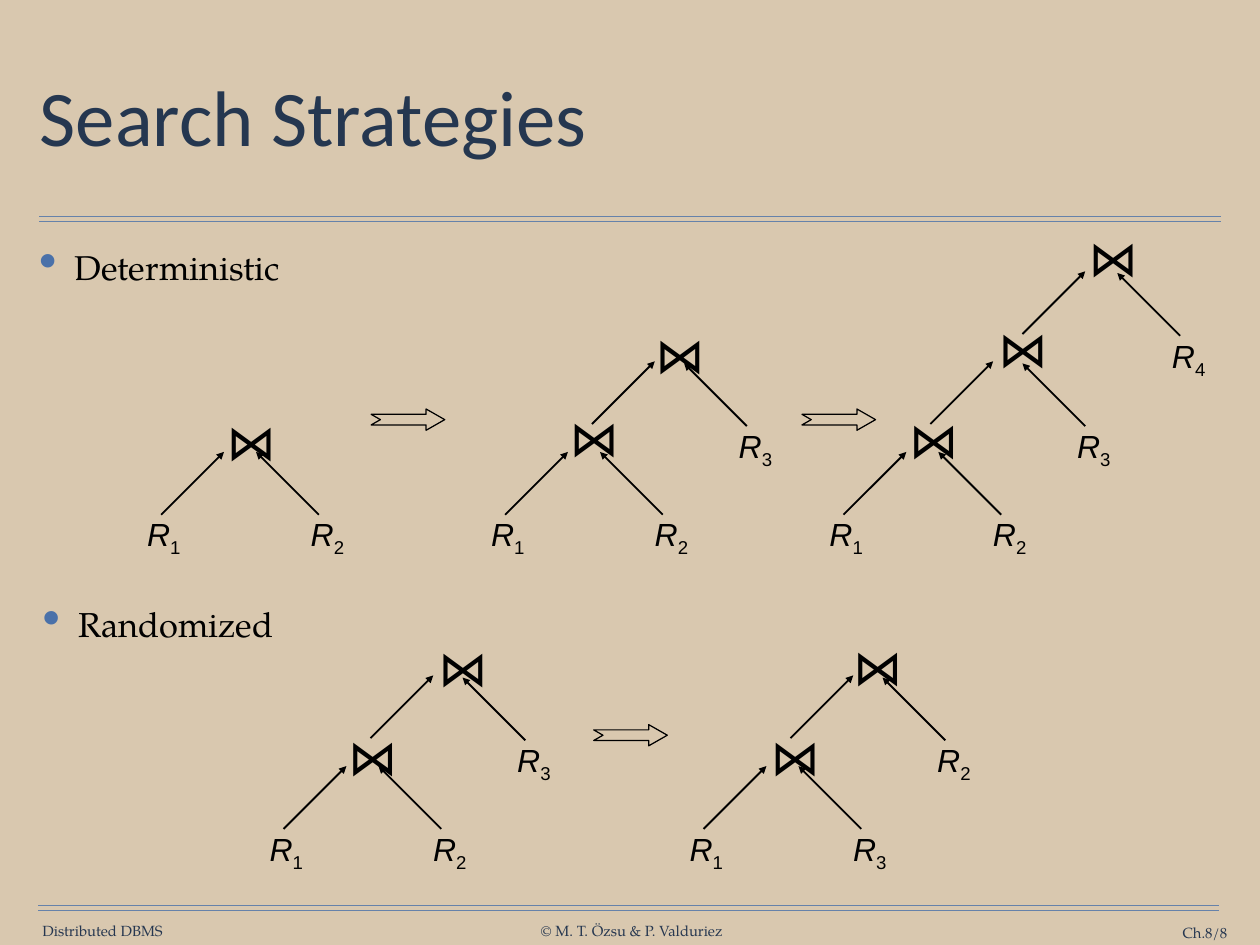
"""Build the slide on search strategies for join trees."""
import pptx
import pptx.dml.color
import pptx.enum.shapes
import pptx.enum.text
import pptx.oxml.ns
import pptx.util
from lxml import etree

Cm, Pt = pptx.util.Cm, pptx.util.Pt
RGB = pptx.dml.color.RGBColor.from_string
qn = pptx.oxml.ns.qn
ALIGN = pptx.enum.text.PP_ALIGN
ANCHOR = pptx.enum.text.MSO_ANCHOR
FIT = pptx.enum.text.MSO_AUTO_SIZE

colors = {"sand": "D9C8AF", "rule": "6682AA", "navy": "253750",
          "foot": "263750", "dot": "4A71A9", "ink": "000000"}
serif = "TeX Gyre Pagella"

deck = pptx.Presentation()
deck.slide_width, deck.slide_height = Cm(36.12), Cm(27.1)
slide = deck.slides.add_slide(deck.slide_layouts[6])
slide.background.fill.solid()
slide.background.fill.fore_color.rgb = RGB(colors["sand"])


def write(text, box, size, font=serif, color="ink", align=ALIGN.LEFT, pad=(0, 0),
          anchor=ANCHOR.TOP, wrap=True, grow=True, sub="", bullet=False, spacing=None):
    """Add a text box, with an optional bullet or an italic letter and subscript."""
    frame = slide.shapes.add_textbox(*[Cm(v) for v in box]).text_frame
    frame.word_wrap = wrap
    frame.auto_size = FIT.SHAPE_TO_FIT_TEXT if grow else FIT.NONE
    frame.vertical_anchor = anchor
    frame.margin_left = frame.margin_right = Cm(pad[0])
    frame.margin_top = frame.margin_bottom = Cm(pad[1])
    para = frame.paragraphs[0]
    para.alignment = align
    if spacing:
        para.line_spacing = spacing
    if bullet:
        props = para._p.get_or_add_pPr()
        props.set("marL", str(Cm(1.02)))
        props.set("indent", str(Cm(-1.02)))
        tint = etree.SubElement(props, qn("a:buClr"))
        etree.SubElement(tint, qn("a:srgbClr"), val=colors["dot"])
        etree.SubElement(props, qn("a:buSzPct"), val="150000")
        etree.SubElement(props, qn("a:buChar"), char="•")
    for part in filter(None, (text, sub)):
        run = para.add_run()
        run.text = part
        run.font.size = Pt(size)
        run.font.name = font
        run.font.color.rgb = RGB(colors[color])
        run.font.italic = bool(sub) and part == text
        props = run._r.get_or_add_rPr()
        etree.SubElement(props, qn("a:ea"), typeface=font)
        if part == sub:
            props.set("baseline", "-25000")


def draw(x1, y1, x2, y2, color="ink", width=1.5, head=True):
    """Add a straight line, with an arrowhead at its end if wanted."""
    line = slide.shapes.add_connector(pptx.enum.shapes.MSO_CONNECTOR.STRAIGHT,
                                      Cm(x1), Cm(y1), Cm(x2), Cm(y2))
    line.line.color.rgb = RGB(colors[color])
    line.line.width = Pt(width)
    if head:
        etree.SubElement(line.line._get_or_add_ln(), qn("a:tailEnd"), type="triangle")
    etree.SubElement(line._element.spPr, qn("a:effectLst"))


for left, top, right in [(1.12, 6.2, 35), (1.09, 25.96, 34.95)]:
    for y in (top, top + 0.15):
        draw(left, y, right, y, color="rule", width=1, head=False)

for text, box, align, wrap in [
        ("Distributed DBMS", (1.19, 26.44, 3.51, 0.51), ALIGN.CENTER, False),
        ("© M. T. Özsu & P. Valduriez", (15.47, 26.44, 5.28, 0.51), ALIGN.CENTER, False),
        ("Ch.8/8", (31.27, 26.49, 3.91, 0.51), ALIGN.RIGHT, True)]:
    write(text, box, 12, color="foot", align=align, anchor=ANCHOR.MIDDLE, wrap=wrap)

write("Search Strategies", (0.99, 1.24, 34.14, 4.47), 64, font="Calibri", color="navy",
      pad=(0.15, 0.15), anchor=ANCHOR.MIDDLE, grow=False, spacing=0.9)
for text, x, y in [("Deterministic", 0.97, 6.91), ("Randomized", 1.07, 17.15)]:
    write(text, (x, y, 34.14, 1.83), 28, pad=(0.15, 0.15), grow=False, bullet=True)

rise = 1.8
levels = [(0, 0, 4.52, 0), (2.49, -2.6, 6.93, -2.54), (5.13, -5.18, 9.65, -5.13)]
trees = [
    (4.62, 14.76, "12", [(6.25, 11.68)]),
    (14.48, 14.76, "123", [(16.08, 11.56), (18.54, 9.17)]),
    (24.18, 14.76, "1234", [(25.81, 11.61), (28.37, 8.99), (30.96, 6.4)]),
    (8.13, 23.77, "123", [(9.73, 20.7), (12.32, 18.14)]),
    (20.17, 23.77, "132", [(21.84, 20.7), (24.21, 18.11)]),
]
for x, y, names, joins in trees:
    spots = [(x - 0.89, y)]
    for (lx, ly, rx, ry), (jx, jy) in zip(levels, joins):
        draw(x + lx, y + ly, x + lx + rise, y + ly - rise)
        draw(x + rx, y + ry, x + rx - rise, y + ry - rise)
        write("⋈", (jx, jy, 1.22, 1.96), 40, font="Noto Sans CJK JP",
              align=ALIGN.CENTER, pad=(0.25, 0.13), wrap=False)
        spots.append((x + rx - 0.72, y + ry))
    for name, (sx, sy) in zip(names, spots):
        write("R", (sx, sy - 0.17, 1.93, 1.47), 26, font="Arial",
              align=ALIGN.CENTER, pad=(0.36, 0.18), wrap=False, sub=name)

for x, y in [(10.64, 11.73), (22.99, 11.73), (17.02, 20.78)]:
    step = slide.shapes.add_shape(pptx.enum.shapes.MSO_SHAPE.NOTCHED_RIGHT_ARROW,
                                  Cm(x), Cm(y), Cm(2.11), Cm(0.61))
    step.adjustments[0], step.adjustments[1] = 0.5, 0.875
    step.shadow.inherit = False
    step.fill.background()
    step.line.color.rgb = RGB(colors["ink"])
    step.line.width = Pt(1)

deck.save("out.pptx")
